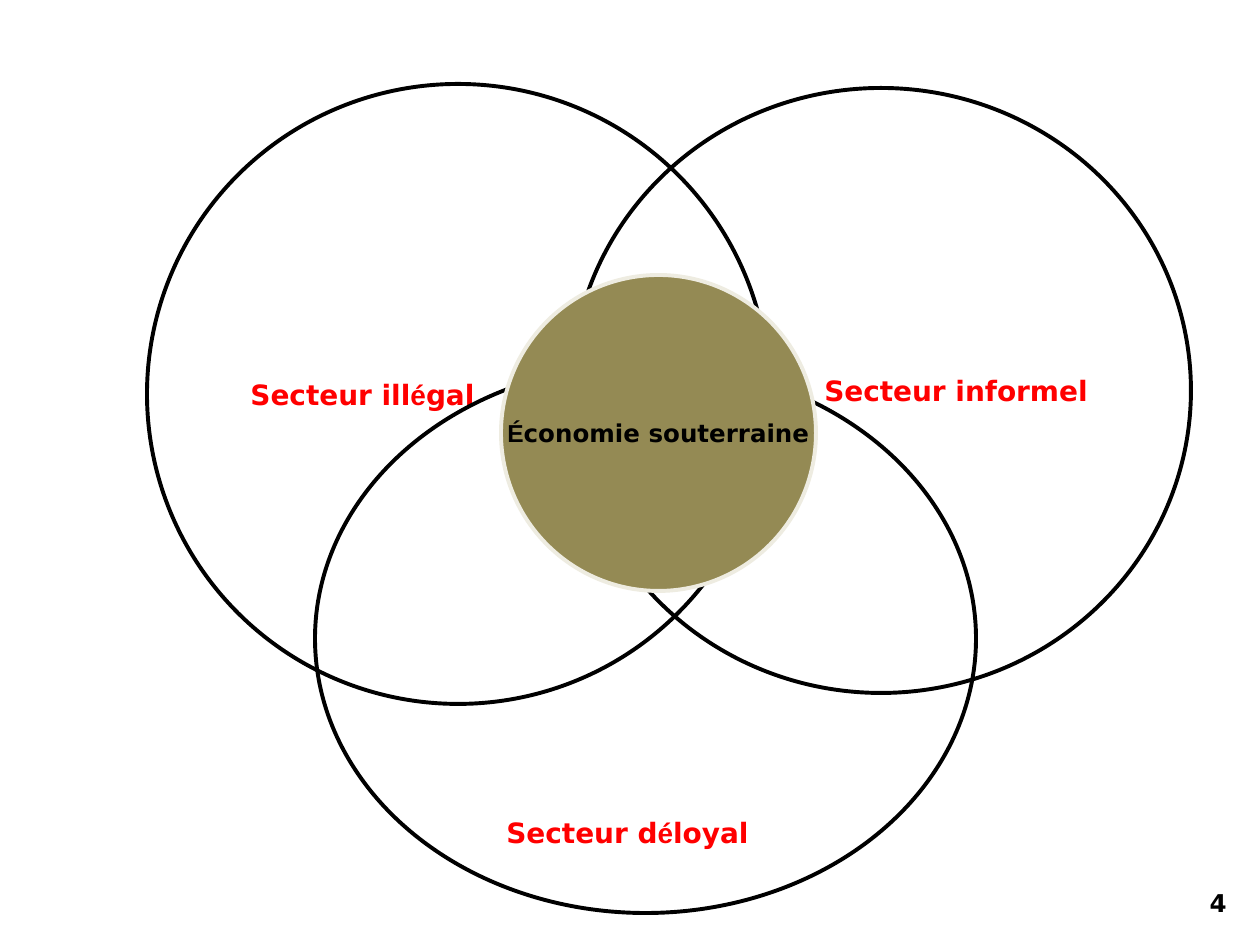
from itertools import groupby

from pptx import Presentation
from pptx.dml.color import RGBColor
from pptx.enum.shapes import MSO_SHAPE as Shape
from pptx.enum.text import MSO_ANCHOR as Anchor, PP_ALIGN as Align
from pptx.util import Emu, Pt

PX = 914400 / 126
COLORS = {"ink": "000000", "label": "FF0000", "core": "948A54", "rim": "EEECE1"}


def px(*sizes):
    return [Emu(round(size * PX)) for size in sizes]


def rgb(name):
    return RGBColor.from_string(COLORS[name])


def write(frame, text, size, color, align, anchor=Anchor.TOP, wrap=True):
    """Fill a text frame in bold, with accented letters in Arial."""
    for key, value in {"word_wrap": wrap, "vertical_anchor": anchor}.items():
        setattr(frame, key, value)
    para = frame.paragraphs[0]
    para.alignment = align
    for accent, chars in groupby(text, lambda char: char in "éÉ"):
        run = para.add_run()
        run.text = "".join(chars)
        style = {"name": "Arial" if accent else "DejaVu Sans",
                 "size": Pt(size), "bold": True}
        for key, value in style.items():
            setattr(run.font, key, value)
        run.font.color.rgb = rgb(color)


def add_circle(slide, box, line="ink", fill=None):
    circle = slide.shapes.add_shape(Shape.OVAL, *px(*box))
    circle.shadow.inherit = False
    circle.line.color.rgb = rgb(line)
    circle.line.width = Pt(2.25)
    if fill:
        circle.fill.solid()
        circle.fill.fore_color.rgb = rgb(fill)
    else:
        circle.fill.background()
    return circle.text_frame


def add_note(slide, box, *text):
    write(slide.shapes.add_textbox(*px(*box)).text_frame, *text)


def add_venn(slide, box):
    left, top, width, height = box
    sectors = [
        ((0, 0, 622, 620), "Secteur illégal", Align.LEFT),
        ((424, 4, 620, 605), "Secteur informel", Align.RIGHT),
        ((168, 280, 661, 549), "", None),
    ]
    for (x, y, w, h), text, align in sectors:
        frame = add_circle(slide, (left + x, top + y, w, h))
        if text:
            write(frame, text, 16, "label", align, Anchor.MIDDLE)

    core = add_circle(slide, (left + 354, top + 191, 315, 316), "rim", "core")
    write(core, "Économie souterraine", 14, "ink", Align.CENTER,
          Anchor.MIDDLE, False)
    add_note(slide, (left + 347, top + height - 104, 305, 47),
             "Secteur déloyal", 16, "label", Align.LEFT)


def main():
    deck = Presentation()
    deck.slide_width, deck.slide_height = px(1260, 945)
    slide = deck.slides.add_slide(deck.slide_layouts[6])
    add_note(slide, (1155, 882, 84, 43), "4", 14, "ink", Align.RIGHT)
    add_venn(slide, (147, 84, 1044, 829))
    deck.save("out.pptx")


if __name__ == "__main__":
    main()
